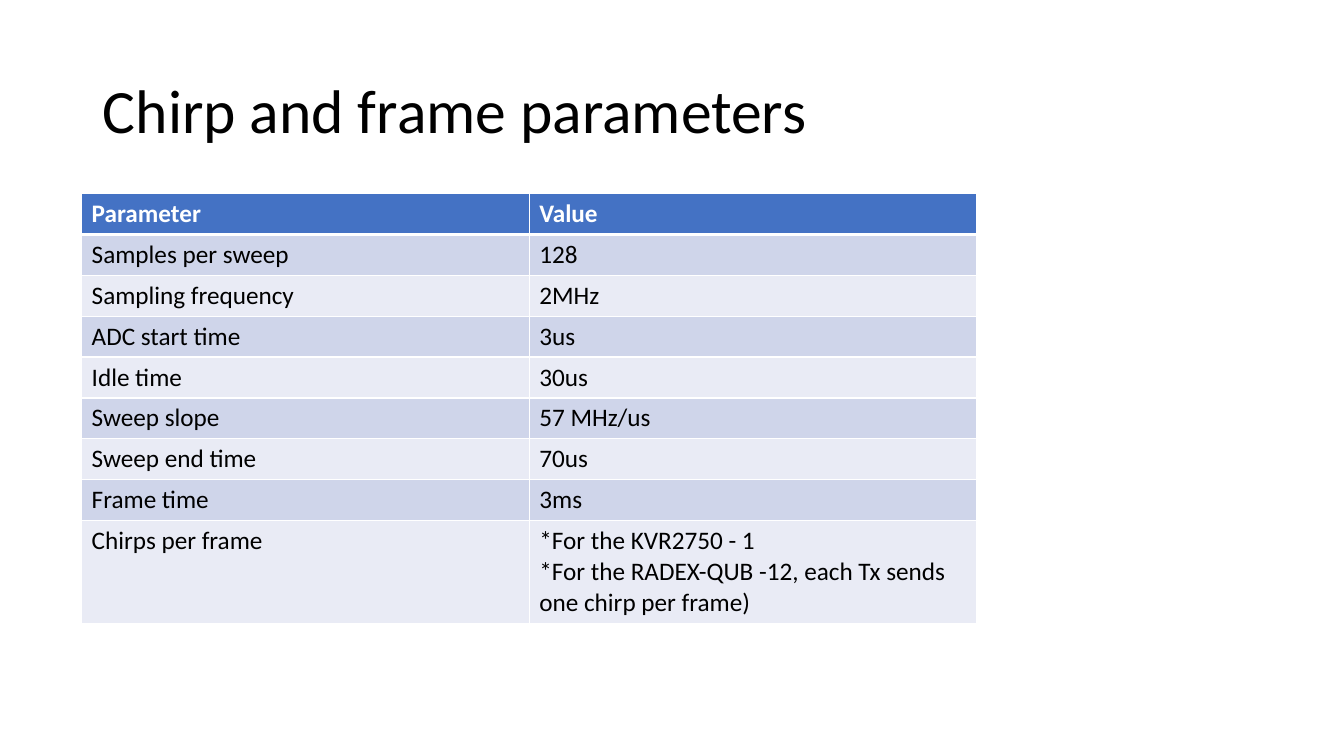
import pptx
import pptx.util
import pptx.dml.color
import pptx.enum.text
import pptx.oxml
import pptx.oxml.ns
from pptx.util import Inches


def color(value):
    return pptx.dml.color.RGBColor.from_string(value)


def add_run(paragraph, text, size, font_color, bold=False):
    run = paragraph.add_run()
    run.text = text
    run.font.name = "Calibri"
    run.font.size = pptx.util.Pt(size)
    run.font.bold = bold
    run.font.color.rgb = color(font_color)


presentation = pptx.Presentation()
presentation.slide_width = Inches(13.33)
presentation.slide_height = Inches(7.5)
slide = presentation.slides.add_slide(presentation.slide_layouts[5])

title = slide.shapes.title
title.left, title.top = Inches(0.92), Inches(0.4)
title.width, title.height = Inches(11.5), Inches(1.45)
title.text_frame.auto_size = pptx.enum.text.MSO_AUTO_SIZE.NONE
title.text_frame.vertical_anchor = pptx.enum.text.MSO_ANCHOR.MIDDLE
paragraph = title.text_frame.paragraphs[0]
paragraph.alignment = pptx.enum.text.PP_ALIGN.LEFT
paragraph.line_spacing = 0.9
add_run(paragraph, "Chirp and frame parameters", 44, "000000")

parameters = [
    ("Parameter", ["Value"]),
    ("Samples per sweep", ["128"]),
    ("Sampling frequency", ["2MHz"]),
    ("ADC start time", ["3us"]),
    ("Idle time", ["30us"]),
    ("Sweep slope", ["57 MHz/us"]),
    ("Sweep end time", ["70us"]),
    ("Frame time", ["3ms"]),
    ("Chirps per frame", [
        "*For the KVR2750 - 1",
        "*For the RADEX-QUB -12, each Tx sends one chirp per frame)",
    ]),
]
table = slide.shapes.add_table(
    len(parameters), 2, Inches(0.81), Inches(1.92), Inches(8.88), Inches(4.22)
).table
for column in table.columns:
    column.width = Inches(4.44)

for row_index, (name, values) in enumerate(parameters):
    header = row_index == 0
    table.rows[row_index].height = Inches(0.4 if len(values) == 1 else 1.02)
    fill_color = "4472C4" if header else ("E9EBF5", "CFD5EA")[row_index % 2]
    widths = {"lnL": 1, "lnR": 1, "lnT": 3 if row_index == 1 else 1, "lnB": 3 if header else 1}
    for column_index, lines in enumerate([[name], values]):
        cell = table.cell(row_index, column_index)
        properties = cell._tc.get_or_add_tcPr()
        for side, width in widths.items():
            properties.append(pptx.oxml.parse_xml(
                f'<a:{side} {pptx.oxml.ns.nsdecls("a")} w="{pptx.util.Pt(width)}">'
                f'<a:solidFill><a:srgbClr val="FFFFFF"/></a:solidFill></a:{side}>'
            ))
        cell.fill.solid()
        cell.fill.fore_color.rgb = color(fill_color)
        for line_index, line in enumerate(lines):
            frame = cell.text_frame
            paragraph = frame.add_paragraph() if line_index else frame.paragraphs[0]
            add_run(paragraph, line, 18, "FFFFFF" if header else "000000", header)

presentation.save("out.pptx")
